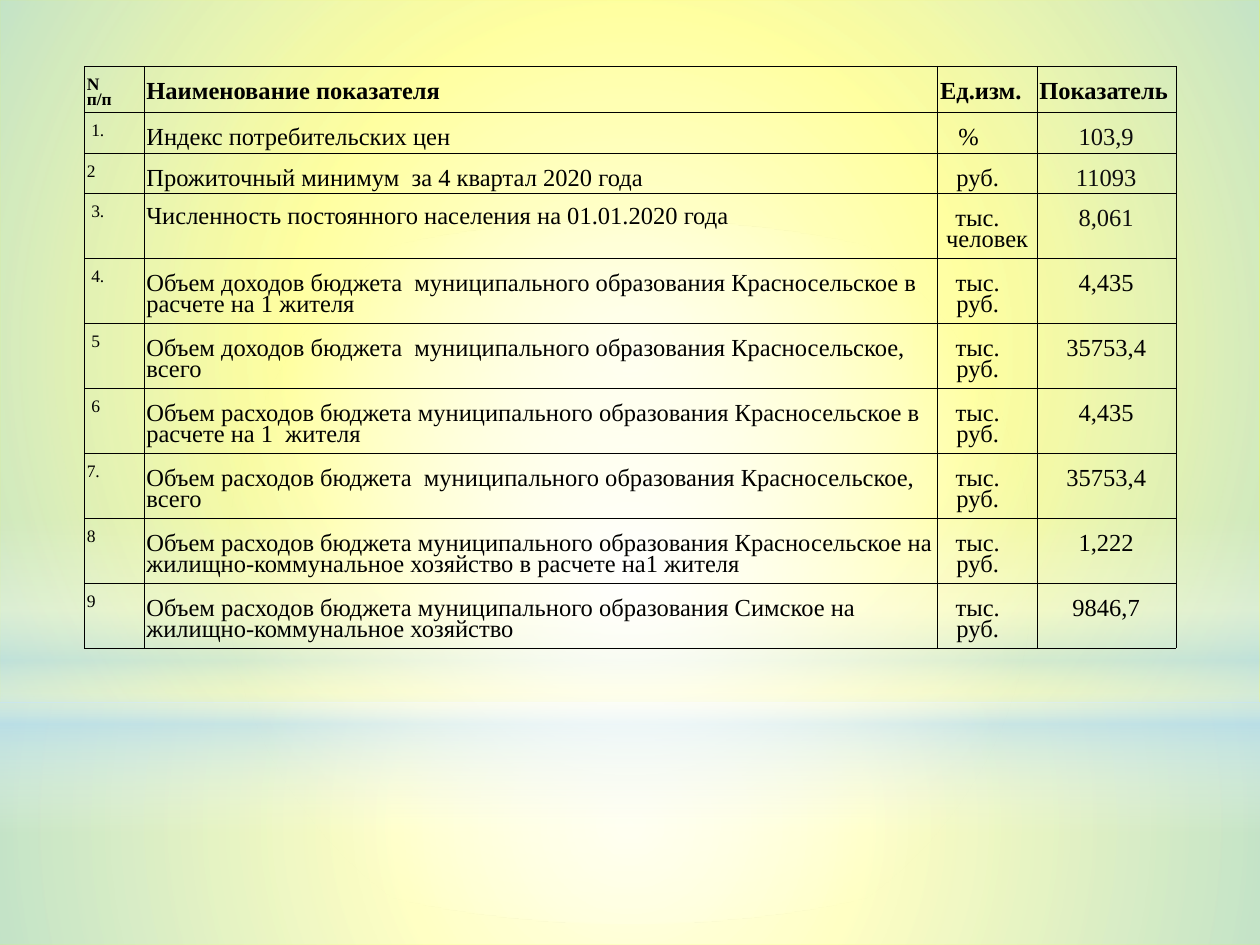
from typing import NamedTuple

from lxml.etree import SubElement
from pptx import Presentation
from pptx.dml.color import RGBColor
from pptx.enum.shapes import MSO_SHAPE as Preset
from pptx.enum.text import PP_ALIGN as Align
from pptx.oxml.ns import qn
from pptx.util import Cm, Pt

FONT = "Times New Roman"
SKY = "B4DCFA"
WHITE = "FFFFFF"
BLACK = "000000"
SOFT_BLACK = "0D0D0D"
SIDE_INSET = 0.05
THOUSAND_RUB = "тыс.\nруб."
MUNICIPAL = "муниципального образования Красносельское"


class Stop(NamedTuple):
    position: int
    color: str
    opacity: int


class Glow(NamedTuple):
    preset: Preset
    top: float
    height: float
    stops: list[Stop]
    radial: bool = True


class Indicator(NamedTuple):
    number: str
    title: str
    unit: str
    value: str
    height: float = 1.31
    number_left: float = SIDE_INSET
    unit_right: float = 0.43
    value_color: str = BLACK


class CellStyle(NamedTuple):
    size: int = 14
    bold: bool = False
    color: str = BLACK
    align: Align = Align.LEFT
    left: float = SIDE_INSET
    top: float = 0.33
    right: float = SIDE_INSET
    spacing: float = 0.78


GLOWS = [
    Glow(Preset.RECTANGLE, 14.17, 4.88,
         [Stop(0, WHITE, 91), Stop(37, WHITE, 76), Stop(100, SKY, 79)]),
    Glow(Preset.RECTANGLE, 0, 14.17,
         [Stop(0, WHITE, 89), Stop(48, WHITE, 62), Stop(100, SKY, 79)]),
    Glow(Preset.RECTANGLE, 10.46, 6.35,
         [Stop(0, WHITE, 0), Stop(29, WHITE, 30), Stop(45, SKY, 40),
          Stop(55, WHITE, 26), Stop(65, SKY, 60), Stop(100, WHITE, 0)], radial=False),
    Glow(Preset.OVAL, 4.45, 14.17, [Stop(0, WHITE, 100), Stop(56, WHITE, 0)]),
]

COLUMN_WIDTHS = [1.2, 16, 2, 2.8]
HEADINGS = ["N\nп/п", "Наименование показателя", "Ед.изм.", "Показатель"]
HEADING_HEIGHT = 0.93
SHIFTED = 0.14
INDICATORS = [
    Indicator("1.", "Индекс потребительских цен", "%", "103,9",
              0.82, SHIFTED, 0.8, SOFT_BLACK),
    Indicator("2", "Прожиточный минимум  за 4 квартал 2020 года", "руб.", "11093",
              0.82, value_color=SOFT_BLACK),
    Indicator("3.", "Численность постоянного населения на 01.01.2020 года",
              "тыс.\nчеловек", "8,061", 1.31, SHIFTED, SIDE_INSET, SOFT_BLACK),
    Indicator("4.", f"Объем доходов бюджета  {MUNICIPAL} в расчете на 1 жителя",
              THOUSAND_RUB, "4,435", number_left=SHIFTED),
    Indicator("5", f"Объем доходов бюджета  {MUNICIPAL}, всего",
              THOUSAND_RUB, "35753,4", number_left=SHIFTED),
    Indicator("6", f"Объем расходов бюджета {MUNICIPAL} в расчете на 1  жителя",
              THOUSAND_RUB, "4,435", number_left=SHIFTED),
    Indicator("7.", f"Объем расходов бюджета  {MUNICIPAL}, всего",
              THOUSAND_RUB, "35753,4"),
    Indicator("8", f"Объем расходов бюджета {MUNICIPAL} на "
              "жилищно-коммунальное хозяйство в расчете на1 жителя",
              THOUSAND_RUB, "1,222"),
    Indicator("9", "Объем расходов бюджета муниципального образования Симское на "
              "жилищно-коммунальное хозяйство", THOUSAND_RUB, "9846,7"),
]


def rgb(color: str) -> RGBColor:
    return RGBColor.from_string(color)


def draw_glow(slide, glow: Glow) -> None:
    """Add a full-width shape with a translucent gradient."""
    shape = slide.shapes.add_shape(glow.preset, 0, Cm(glow.top), Cm(25.4), Cm(glow.height))
    shape.shadow.inherit = False
    shape.line.fill.background()
    shape.fill.background()
    properties = shape.element.spPr
    gradient = properties.makeelement(qn("a:gradFill"), {"rotWithShape": "1"})
    properties.replace(properties.find(qn("a:noFill")), gradient)
    stops = SubElement(gradient, qn("a:gsLst"))
    for stop in glow.stops:
        mark = SubElement(stops, qn("a:gs"), pos=str(stop.position * 1000))
        color = SubElement(mark, qn("a:srgbClr"), val=stop.color)
        SubElement(color, qn("a:alpha"), val=str(stop.opacity * 1000))
    if glow.radial:
        circle = SubElement(gradient, qn("a:path"), {"path": "circle"})
        SubElement(circle, qn("a:fillToRect"), {side: "50000" for side in "ltrb"})
    else:
        SubElement(gradient, qn("a:lin"), ang="5400000", scaled="0")


def add_borders(cell) -> None:
    properties = cell._tc.get_or_add_tcPr()
    for order, side in enumerate(("lnL", "lnR", "lnT", "lnB")):
        border = properties.makeelement(qn(f"a:{side}"), {"w": str(Pt(0.06))})
        fill = SubElement(border, qn("a:solidFill"))
        SubElement(fill, qn("a:srgbClr"), val=BLACK)
        properties.insert(order, border)


def fill_cell(cell, text: str, style: CellStyle) -> None:
    cell.fill.background()
    add_borders(cell)
    cell.margin_left, cell.margin_right = Cm(style.left), Cm(style.right)
    cell.margin_top, cell.margin_bottom = Cm(style.top), 0
    cell.text_frame.text = text
    for paragraph in cell.text_frame.paragraphs:
        paragraph.alignment = style.align
        paragraph.line_spacing = style.spacing
        for run in paragraph.runs:
            run.font.name = FONT
            run.font.size = Pt(style.size)
            run.font.bold = style.bold
            run.font.color.rgb = rgb(style.color)


def fill_indicator(cells, indicator: Indicator) -> None:
    number, title, unit, value = cells
    # The population title sits higher, with looser lines, than the others.
    population = indicator.unit.endswith("человек")
    title_style = CellStyle(top=0.23, spacing=0.9) if population else CellStyle()
    fill_cell(number, indicator.number,
              CellStyle(size=10, left=indicator.number_left, top=0.25))
    fill_cell(title, indicator.title, title_style)
    fill_cell(unit, indicator.unit,
              CellStyle(align=Align.CENTER, right=indicator.unit_right))
    fill_cell(value, indicator.value,
              CellStyle(align=Align.CENTER, color=indicator.value_color))
    if population:
        # The long second word needs the full width, so only the first is indented.
        thousand = unit.text_frame.paragraphs[0]
        thousand.alignment = Align.LEFT
        thousand._p.get_or_add_pPr().set("marL", str(Cm(0.31)))


def draw_table(slide) -> None:
    heights = [HEADING_HEIGHT] + [indicator.height for indicator in INDICATORS]
    table = slide.shapes.add_table(
        len(heights), len(COLUMN_WIDTHS), Cm(1.7), Cm(1.33),
        Cm(sum(COLUMN_WIDTHS)), Cm(sum(heights))).table
    table.first_row = table.horz_banding = False
    for column, width in zip(table.columns, COLUMN_WIDTHS):
        column.width = Cm(width)
    for row, height in zip(table.rows, heights):
        row.height = Cm(height)
    heading_row, *indicator_rows = table.rows
    for index, (cell, heading) in enumerate(zip(heading_row.cells, HEADINGS)):
        style = CellStyle(bold=True) if index else CellStyle(size=10, bold=True, top=0.25)
        fill_cell(cell, heading, style)
    for row, indicator in zip(indicator_rows, INDICATORS):
        fill_indicator(row.cells, indicator)


def main() -> None:
    presentation = Presentation()
    presentation.slide_width, presentation.slide_height = Cm(25.4), Cm(19.05)
    slide = presentation.slides.add_slide(presentation.slide_layouts[6])
    slide.background.fill.solid()
    slide.background.fill.fore_color.rgb = rgb("FFFF00")
    for glow in GLOWS:
        draw_glow(slide, glow)
    draw_table(slide)
    presentation.save("out.pptx")


if __name__ == "__main__":
    main()
